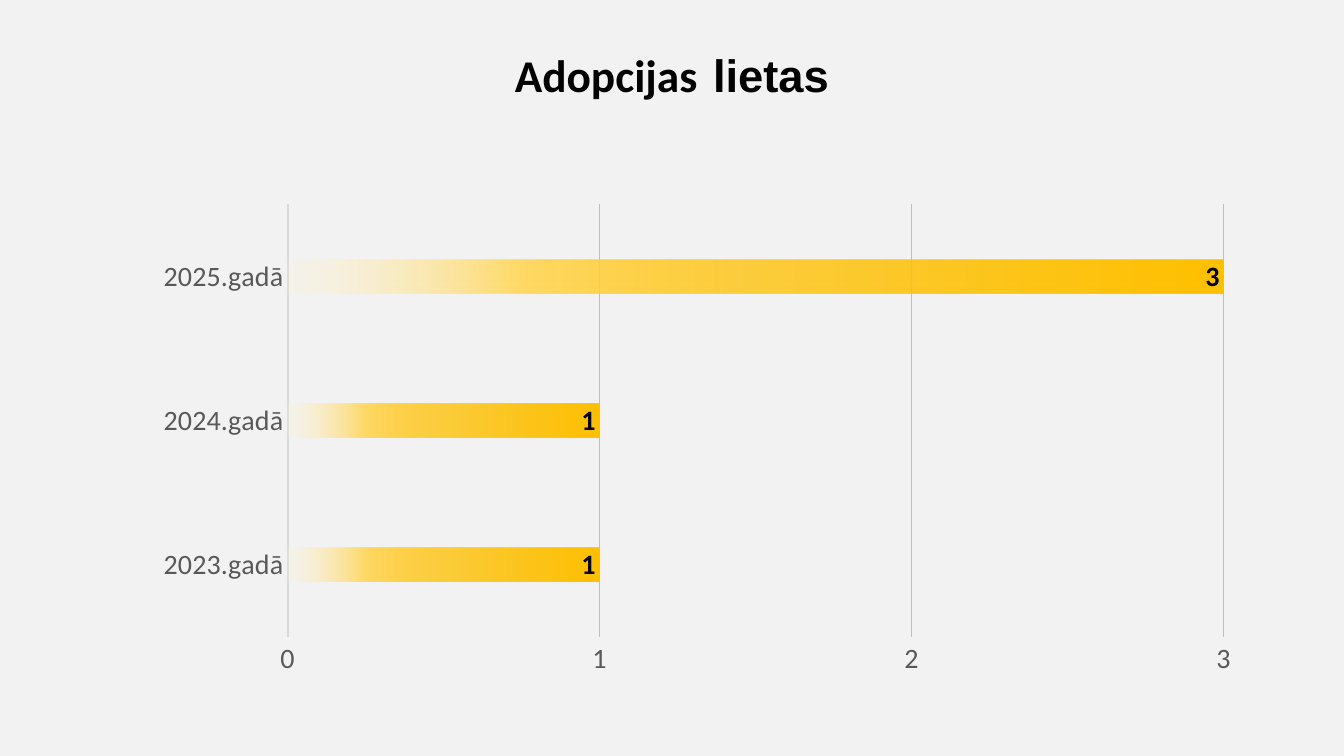
from pptx import Presentation
from pptx.chart.data import CategoryChartData
from pptx.dml.color import RGBColor
from pptx.enum.chart import XL_CHART_TYPE, XL_LABEL_POSITION, XL_TICK_MARK
from pptx.enum.text import MSO_ANCHOR, PP_ALIGN
from pptx.oxml import parse_xml
from pptx.oxml.ns import nsdecls, qn
from pptx.util import Pt

# Position in percent, colour, opacity in percent
BAR_STOPS = [(0, "FFC000", 100), (51, "FFC000", 75),
             (75, "FFD966", 100), (100, "FFF2CC", 15)]
PLOT_FRAME = {"x": 0.13, "y": 0.02, "w": 0.84, "h": 0.88}


def colour(value):
    return RGBColor.from_string(value)


def style_font(font, size, value, name="Calibri", bold=False):
    font.size = Pt(size)
    font.color.rgb = colour(value)
    font.name = name
    font.bold = bold


def add_title(page, spans):
    box = page.shapes.add_textbox(Pt(66), Pt(29), Pt(828), Pt(48))
    frame = box.text_frame
    frame.word_wrap = True
    frame.vertical_anchor = MSO_ANCHOR.MIDDLE
    para = frame.paragraphs[0]
    para.alignment = PP_ALIGN.CENTER
    para.line_spacing = 0.9
    for text, size, name in spans:
        span = para.add_run()
        span.text = text
        style_font(span.font, size, "000000", name, True)


def fill_gradient(series, stops, angle):
    series.format.fill.solid()
    solid = series._element.find(qn("c:spPr")).find(qn("a:solidFill"))
    marks = "".join(
        f'<a:gs pos="{place * 1000}"><a:srgbClr val="{value}">'
        f'<a:alpha val="{opacity * 1000}"/></a:srgbClr></a:gs>'
        for place, value, opacity in stops)
    gradient = parse_xml(
        f'<a:gradFill {nsdecls("a")} rotWithShape="1"><a:gsLst>{marks}</a:gsLst>'
        f'<a:lin ang="{angle * 60000}" scaled="0"/></a:gradFill>')
    solid.getparent().replace(solid, gradient)


def place_plot(chart, frame):
    area = chart._chartSpace.chart.plotArea
    for layout in area.findall(qn("c:layout")):
        area.remove(layout)
    modes = "".join(f'<c:{side}Mode val="edge"/>' for side in "xy")
    sizes = "".join(f'<c:{side} val="{value}"/>' for side, value in frame.items())
    area.insert(0, parse_xml(
        f'<c:layout {nsdecls("c")}><c:manualLayout><c:layoutTarget val="inner"/>'
        f'{modes}{sizes}</c:manualLayout></c:layout>'))


def style_axis(axis):
    axis.major_tick_mark = XL_TICK_MARK.NONE
    axis.minor_tick_mark = XL_TICK_MARK.NONE
    style_font(axis.tick_labels.font, 20, "595959")


def add_bar_chart(page, categories, values):
    data = CategoryChartData()
    data.categories = categories
    data.add_series("Series 1", values)
    chart = page.shapes.add_chart(
        XL_CHART_TYPE.BAR_CLUSTERED, Pt(102), Pt(139), Pt(796), Pt(351), data).chart
    chart.has_legend = False
    chart.has_title = False
    style_font(chart.font, 10, "000000")
    place_plot(chart, PLOT_FRAME)

    # Axes and grid
    years, counts = chart.category_axis, chart.value_axis
    style_axis(years)
    years.format.line.color.rgb = colour("D9D9D9")
    years.format.line.width = Pt(1.5)
    style_axis(counts)
    counts.format.line.fill.background()
    counts.minimum_scale, counts.maximum_scale, counts.major_unit = 0, 3, 1
    counts.tick_labels.number_format = "0"
    counts.tick_labels.number_format_is_linked = False
    grid = counts.major_gridlines.format.line
    grid.color.rgb = colour("BFBFBF")
    grid.width = Pt(0.75)

    # Bars and their values
    plot = chart.plots[0]
    plot.gap_width = 326
    plot.overlap = -58
    plot.vary_by_categories = False
    bars = plot.series[0]
    fill_gradient(bars, BAR_STOPS, 180)
    labels = bars.data_labels
    labels.show_value = True
    labels.position = XL_LABEL_POSITION.INSIDE_END
    style_font(labels.font, 20, "000000", bold=True)


def main():
    deck = Presentation()
    deck.slide_width, deck.slide_height = Pt(960), Pt(540)
    page = deck.slides.add_slide(deck.slide_layouts[6])
    page.background.fill.solid()
    page.background.fill.fore_color.rgb = colour("F2F2F2")
    add_title(page, [("Adopcijas", 32.4, "Calibri"), (" ", 39.6, "Arial"),
                     ("lietas", 32.4, "Arial")])
    add_bar_chart(page, ["2023.gadā", "2024.gadā", "2025.gadā"], [1, 1, 3])
    deck.save("out.pptx")


if __name__ == "__main__":
    main()
